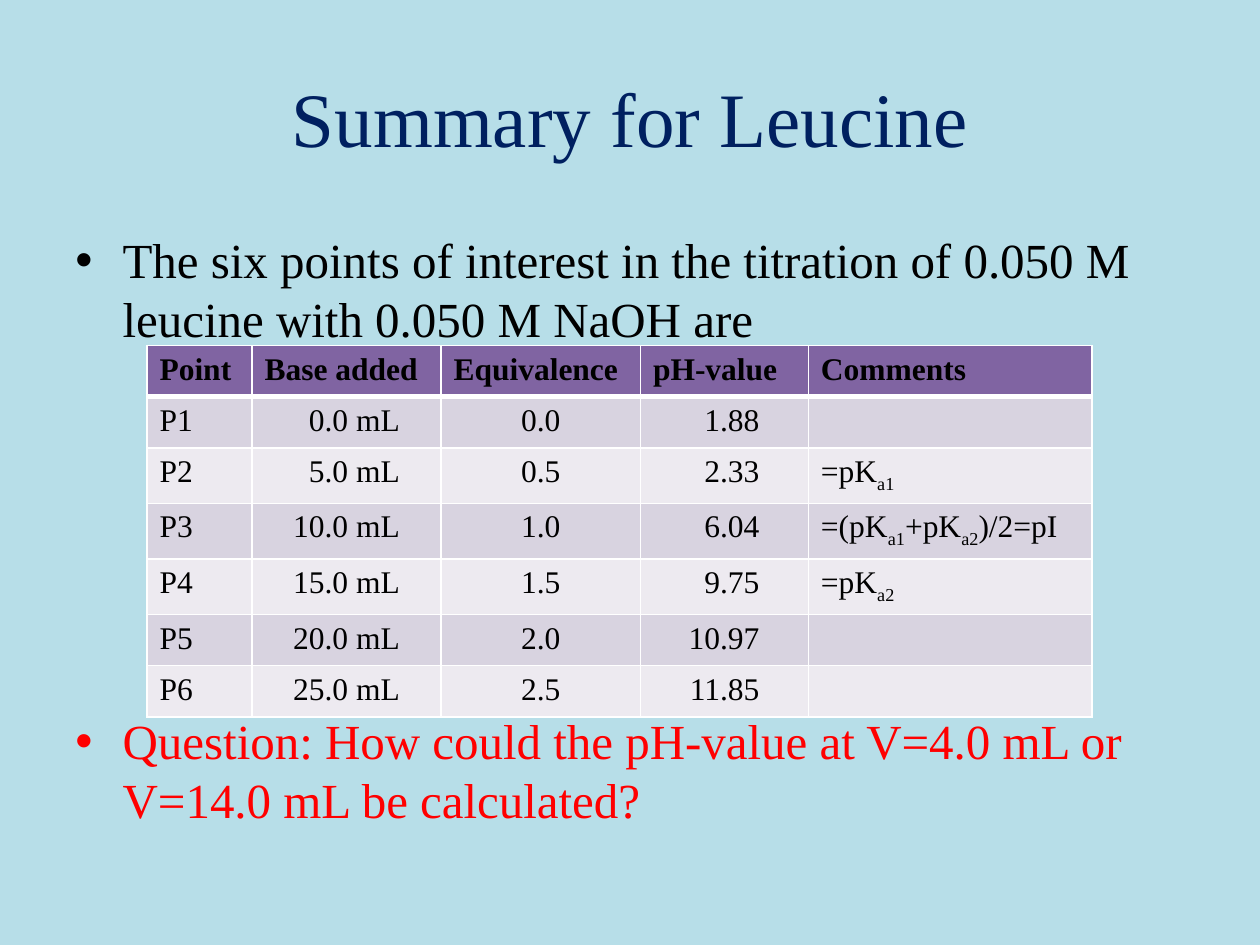
import pptx
import pptx.dml.color
import pptx.enum.text
import pptx.oxml
import pptx.oxml.ns
import pptx.util
from lxml import etree

Pt = pptx.util.Pt
ALIGN = pptx.enum.text.PP_ALIGN
ANCHOR = pptx.enum.text.MSO_ANCHOR
qn = pptx.oxml.ns.qn

COLORS = {
    "background": "B7DEE8",
    "title": "002060",
    "text": "000000",
    "question": "FF0000",
    "header": "8064A2",
    "odd_row": "D8D3E0",
    "even_row": "EDEAF0",
    "border": "FFFFFF",
}


def rgb(name):
    return pptx.dml.color.RGBColor.from_string(COLORS[name])


def write_text(frame, text, size=18, color="text", bold=False, align=ALIGN.LEFT,
               bullet=False, line_height=None):
    frame.word_wrap = True
    paragraph = frame.paragraphs[0]
    paragraph.alignment = align
    if line_height:
        paragraph.line_spacing = Pt(line_height)
    if bullet:
        properties = paragraph._p.get_or_add_pPr()
        properties.set("marL", str(Pt(27)))
        properties.set("indent", str(-Pt(27)))
        etree.SubElement(properties, qn("a:buFont"), typeface="Arial")
        etree.SubElement(properties, qn("a:buChar"), char="•")
    for position, part in enumerate(text.split("_")):
        if part:
            run = paragraph.add_run()
            run.text = part
            run.font.name = "Times New Roman"
            run.font.size = Pt(size)
            run.font.bold = bold
            run.font.color.rgb = rgb(color)
            if position % 2:
                run.font._element.set("baseline", "-25000")


presentation = pptx.Presentation()
presentation.slide_width = Pt(720)
presentation.slide_height = Pt(540)
slide = presentation.slides.add_slide(presentation.slide_layouts[6])
slide.background.fill.solid()
slide.background.fill.fore_color.rgb = rgb("background")

title = slide.shapes.add_textbox(Pt(36), Pt(21.6), Pt(648), Pt(90)).text_frame
title.vertical_anchor = ANCHOR.MIDDLE
write_text(title, "Summary for Leucine", size=44, color="title", align=ALIGN.CENTER)

statements = [
    (127.6, "text", "The six points of interest in the titration of 0.050 M leucine with 0.050 M NaOH are"),
    (402.5, "question", "Question: How could the pH-value at V=4.0 mL or V=14.0 mL be calculated?"),
]
for top, color, statement in statements:
    box = slide.shapes.add_textbox(Pt(36), Pt(top), Pt(648), Pt(75))
    write_text(box.text_frame, statement, size=28, color=color, bullet=True, line_height=33.75)

titration_rows = [
    ("Point", "Base added", "Equivalence", "pH-value", "Comments"),
    ("P1", "0.0 mL", "0.0", "1.88", ""),
    ("P2", "5.0 mL", "0.5", "2.33", "=pK_a1_"),
    ("P3", "10.0 mL", "1.0", "6.04", "=(pK_a1_+pK_a2_)/2=pI"),
    ("P4", "15.0 mL", "1.5", "9.75", "=pK_a2_"),
    ("P5", "20.0 mL", "2.0", "10.97", ""),
    ("P6", "25.0 mL", "2.5", "11.85", ""),
]
column_widths = [60, 108, 114, 96, 162]
number_margins = {1: 23.5, 2: 45.7, 3: 28}
row_height = 29.2

titration = slide.shapes.add_table(
    len(titration_rows), len(column_widths), Pt(84), Pt(197.5),
    Pt(sum(column_widths)), Pt(row_height * len(titration_rows))).table
for column, width in zip(titration.columns, column_widths):
    column.width = Pt(width)

for row_index, values in enumerate(titration_rows):
    titration.rows[row_index].height = Pt(row_height)
    is_header = row_index == 0
    fill_name = "header" if is_header else "odd_row" if row_index % 2 else "even_row"
    for column_index, value in enumerate(values):
        cell = titration.cell(row_index, column_index)
        cell.fill.solid()
        cell.fill.fore_color.rgb = rgb(fill_name)
        is_number = not is_header and column_index in number_margins
        if is_number:
            cell.margin_right = Pt(number_margins[column_index])
        write_text(cell.text_frame, value, bold=is_header,
                   align=ALIGN.RIGHT if is_number else ALIGN.LEFT)
        cell_properties = cell._tc.get_or_add_tcPr()
        for order, side in enumerate(("lnL", "lnR", "lnT", "lnB")):
            thick = (row_index, side) in ((0, "lnB"), (1, "lnT"))
            border = etree.Element(qn(f"a:{side}"), w=str(Pt(3 if thick else 1)))
            border_fill = etree.SubElement(border, qn("a:solidFill"))
            etree.SubElement(border_fill, qn("a:srgbClr"), val=COLORS["border"])
            cell_properties.insert(order, border)

presentation.save("out.pptx")
